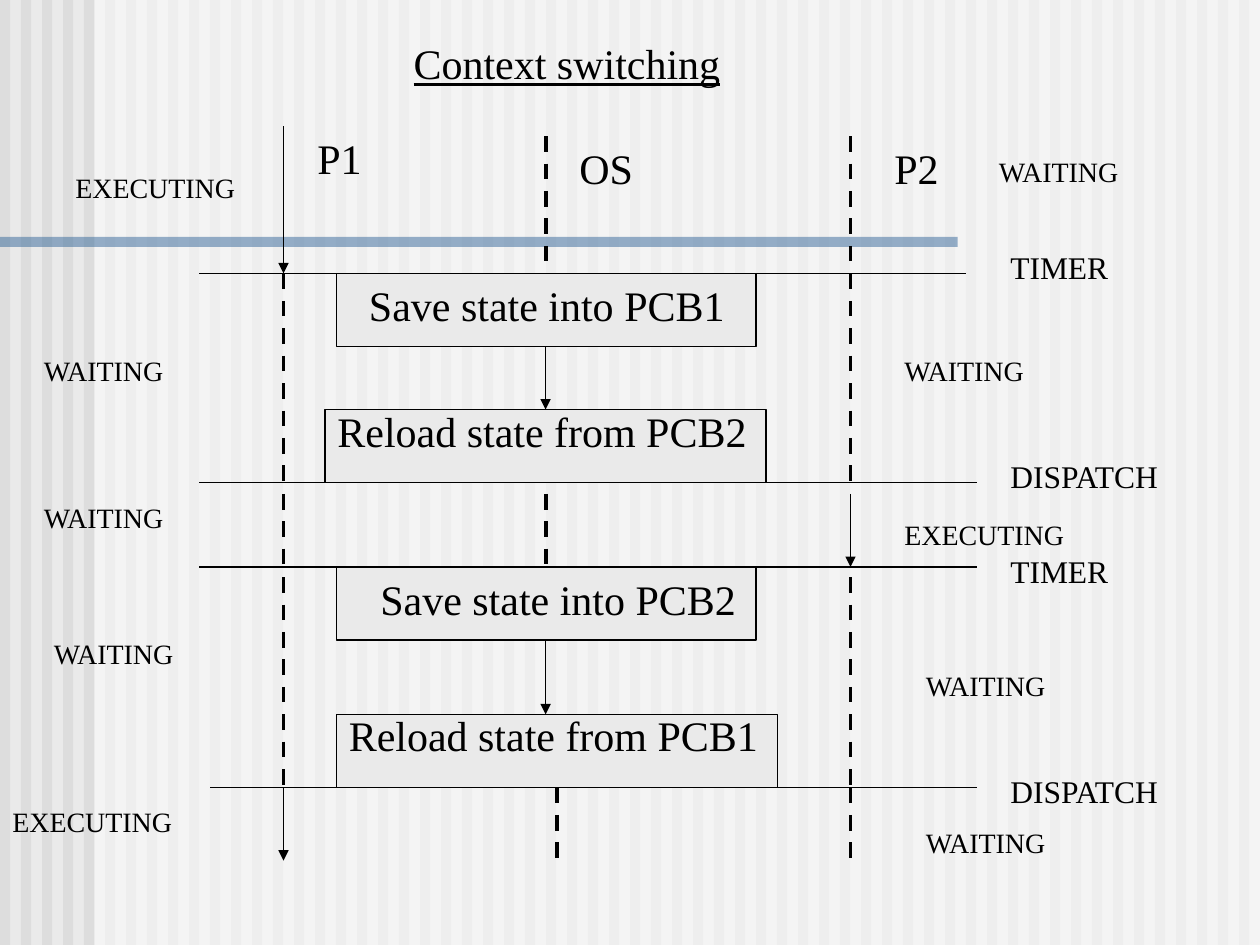
from lxml.etree import SubElement
from pptx import Presentation
from pptx.dml.color import RGBColor
from pptx.enum.dml import MSO_LINE
from pptx.enum.shapes import MSO_CONNECTOR as Connector, MSO_SHAPE as Shape
from pptx.enum.text import MSO_ANCHOR as Anchor, PP_ALIGN as Align
from pptx.oxml.ns import qn
from pptx.util import Inches, Pt

BLACK = RGBColor(0x00, 0x00, 0x00)
WHITE = RGBColor(0xFF, 0xFF, 0xFF)
PAPER = RGBColor(0xEA, 0xEA, 0xEA)
STRIPE = RGBColor(0xDD, 0xDD, 0xDD)
BLUE = RGBColor(0x33, 0x66, 0x99)

P1_X, OS_X, P2_X = 2.25, 4.33, 6.75
TIMER_1, DISPATCH_1, TIMER_2, DISPATCH_2 = 2.17, 3.83, 4.5, 6.25
END = 6.83
STEP_HEIGHT = 0.58
LABEL_HEIGHTS = {16: 0.37, 18: 0.4, 24: 0.5}


class Diagram:
    font_name = "Times New Roman"

    def __init__(self, slide):
        self.slide = slide
        self.shapes = slide.shapes
        slide.background.fill.solid()
        slide.background.fill.fore_color.rgb = PAPER

    def block(self, left, top, width, height, color, outlined=False, opacity=None):
        block = self.shapes.add_shape(
            Shape.RECTANGLE, Inches(left), Inches(top), Inches(width), Inches(height))
        block.shadow.inherit = False
        block.fill.solid()
        block.fill.fore_color.rgb = color
        if outlined:
            block.line.color.rgb = BLACK
            block.line.width = Pt(0.75)
        else:
            block.line.fill.background()
        if opacity is not None:
            srgb = block._element.spPr.find(".//" + qn("a:srgbClr"))
            SubElement(srgb, qn("a:alpha")).set("val", str(opacity * 1000))

    def line(self, x1, y1, x2, y2, dashed=False, arrow=False):
        line = self.shapes.add_connector(
            Connector.STRAIGHT, Inches(x1), Inches(y1), Inches(x2), Inches(y2))
        line.line.color.rgb = BLACK
        line.line.width = Pt(2.25 if dashed else 0.75)
        if dashed:
            line.line.dash_style = MSO_LINE.DASH
        properties = line._element.spPr
        if arrow:
            outline = properties.find(qn("a:ln"))
            SubElement(outline, qn("a:tailEnd")).set("type", "triangle")
        SubElement(properties, qn("a:effectLst"))

    def set_text(self, holder, text, size):
        frame = holder.text_frame
        frame.word_wrap = True
        frame.vertical_anchor = Anchor.BOTTOM
        frame.text = text
        paragraph = frame.paragraphs[0]
        paragraph.font.name = self.font_name
        paragraph.font.size = Pt(size)
        paragraph.font.color.rgb = BLACK
        return paragraph

    def label(self, text, left, top, width, size, height=None):
        box = self.shapes.add_textbox(
            Inches(left), Inches(top), Inches(width),
            Inches(height or LABEL_HEIGHTS[size]))
        self.set_text(box, text, size)

    def title(self, text, left, top, width, height):
        title = self.shapes.title
        title.left, title.top = Inches(left), Inches(top)
        title.width, title.height = Inches(width), Inches(height)
        paragraph = self.set_text(title, text, 24)
        paragraph.alignment = Align.CENTER
        paragraph.font.underline = True
        self.shapes._spTree.append(title._element)


def draw_backdrop(diagram):
    for index in range(60):
        diagram.block(index / 6, 0, 0.08, 7.5, STRIPE)
    diagram.block(0.75, 0, 9.25, 7.5, WHITE, opacity=50)
    diagram.block(0, 1.88, 7.6, 0.08, BLUE, opacity=50)


def draw_timelines(diagram):
    for x, top, bottom in (
        (OS_X, 1.08, TIMER_1), (P2_X, 1.08, TIMER_1),
        (P1_X, TIMER_1, DISPATCH_1), (P2_X, TIMER_1, DISPATCH_1),
        (P1_X, 3.92, TIMER_2), (OS_X, 3.92, 4.58),
        (P1_X, 4.58, DISPATCH_2), (P2_X, 4.58, DISPATCH_2),
        (P2_X, DISPATCH_2, END), (4.42, DISPATCH_2, END),
    ):
        diagram.line(x, top, x, bottom, dashed=True)
    for x, top, bottom in (
        (P1_X, 1, TIMER_1), (P2_X, 3.92, TIMER_2), (P1_X, DISPATCH_2, END),
        (OS_X, 2.75, 3.25), (OS_X, 5.08, 5.67),
    ):
        diagram.line(x, top, x, bottom, arrow=True)


def draw_events(diagram):
    for event, y, left, right, label_top in (
        ("TIMER", TIMER_1, 1.58, 7.67, 1.92),
        ("DISPATCH", DISPATCH_1, 1.58, 7.75, 3.58),
        ("TIMER", TIMER_2, 1.58, 7.75, 4.33),
        ("DISPATCH", DISPATCH_2, 1.67, 7.75, 6.08),
    ):
        diagram.line(left, y, right, y)
        diagram.label(event, 7.92, label_top, 2.08, 18)


def draw_steps(diagram):
    for step, left, top, width, text_left, text_top in (
        ("Save state into PCB1", 2.67, TIMER_1, 3.33, 2.83, 2.17),
        ("Reload state from PCB2", 2.58, 3.25, 3.5, 2.58, 3.17),
        ("Save state into PCB2", 2.67, TIMER_2, 3.33, 2.92, 4.5),
        ("Reload state from PCB1", 2.67, 5.67, 3.5, 2.67, 5.58),
    ):
        diagram.block(left, top, width, STEP_HEIGHT, PAPER, outlined=True)
        diagram.label(step, text_left, text_top, 4.08, 24)


def draw_states(diagram):
    for name, left, top in (("P1", 2.42, 1), ("OS", 4.5, 1.08), ("P2", 7, 1.08)):
        diagram.label(name, left, top, 1, 24)
    for left, top in (
        (0.25, 2.75), (7.08, 2.75), (7.83, 1.17), (0.25, 3.92),
        (0.33, 5), (7.25, 5.25), (7.25, 6.5),
    ):
        diagram.label("WAITING", left, top, 1.25, 16)
    for left, top, width, height in (
        (0.5, 1.17, 1.83, 0.5), (0, 6.33, 1.58, 0.37), (7.08, 3.92, 1.83, 0.5),
    ):
        diagram.label("EXECUTING", left, top, width, 16, height)


def main():
    presentation = Presentation()
    presentation.slide_width = Inches(10)
    presentation.slide_height = Inches(7.5)
    title_only = presentation.slide_layouts[5]
    diagram = Diagram(presentation.slides.add_slide(title_only))
    draw_backdrop(diagram)
    draw_timelines(diagram)
    draw_events(diagram)
    draw_steps(diagram)
    draw_states(diagram)
    diagram.title("Context switching", 2.25, 0.25, 4.5, 0.5)
    presentation.save("out.pptx")


if __name__ == "__main__":
    main()
